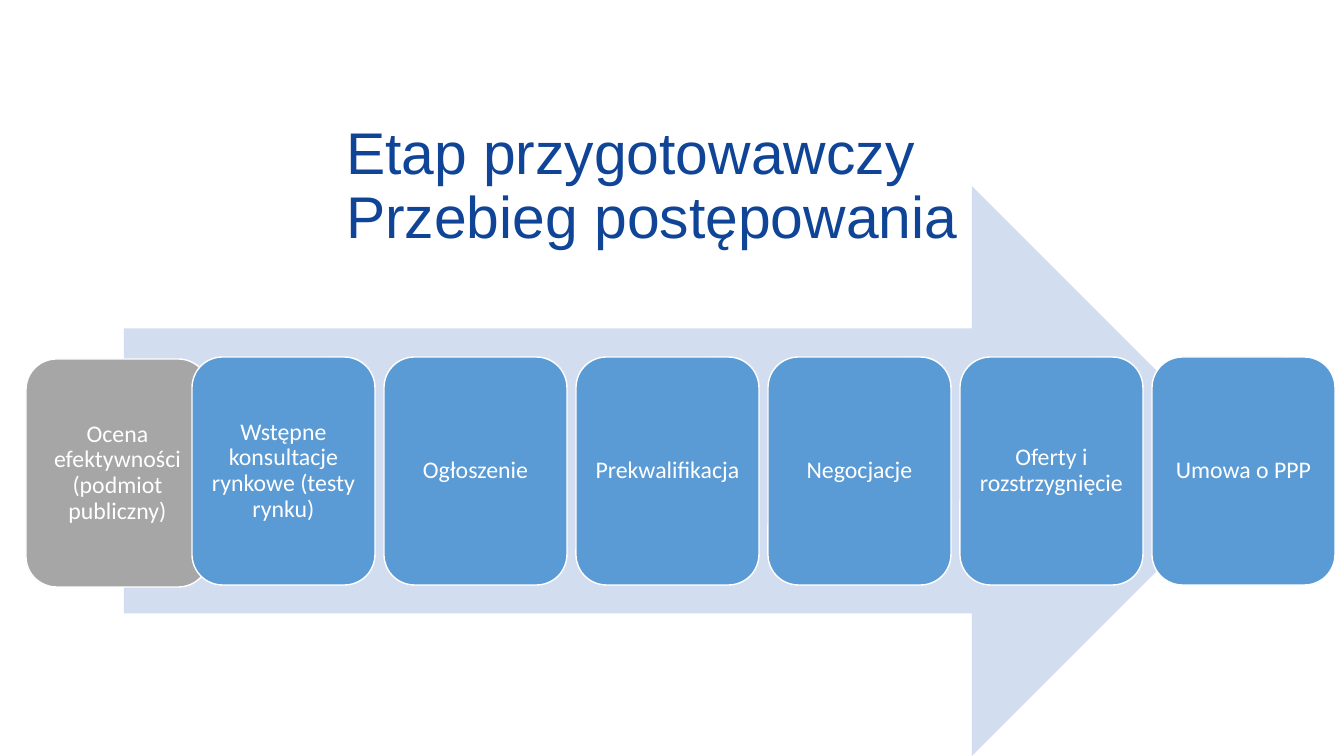
from dataclasses import dataclass

from pptx import Presentation
from pptx.dml.color import RGBColor
from pptx.enum.shapes import MSO_SHAPE
from pptx.enum.text import MSO_ANCHOR, MSO_AUTO_SIZE, PP_ALIGN
from pptx.util import Emu, Pt

ARROW = MSO_SHAPE.RIGHT_ARROW
CARD = MSO_SHAPE.ROUNDED_RECTANGLE
MIDDLE = MSO_ANCHOR.MIDDLE
NO_FIT = MSO_AUTO_SIZE.NONE
LEFT, CENTER = PP_ALIGN.LEFT, PP_ALIGN.CENTER

EMU_PER_PX = 914400 / 100.8
SLIDE_WIDTH, SLIDE_HEIGHT = 1344, 756
STAGE_PITCH, STAGE_TOP = 192, 357
CARD_WIDTH, CARD_HEIGHT = 183, 228
CARD_INSET = 7

ASSESSMENT = "Ocena efektywności (podmiot publiczny)"
STAGES = (
    "Wstępne konsultacje rynkowe (testy rynku)",
    "Ogłoszenie",
    "Prekwalifikacja",
    "Negocjacje",
    "Oferty i rozstrzygnięcie",
    "Umowa o PPP",
)


@dataclass(frozen=True)
class Theme:
    """Colours, fonts and type sizes of the slide."""

    title: RGBColor = RGBColor(0x0F, 0x44, 0x96)
    arrow: RGBColor = RGBColor(0xD2, 0xDE, 0xEF)
    assessment: RGBColor = RGBColor(0xA6, 0xA6, 0xA6)
    stage: RGBColor = RGBColor(0x5B, 0x9B, 0xD5)
    white: RGBColor = RGBColor(0xFF, 0xFF, 0xFF)
    title_font: str = "Arial"
    card_font: str = "Calibri"
    title_size: int = 42
    card_size: int = 17


THEME = Theme()


def px(length):
    """Turn pixels into EMU."""
    return Emu(round(length * EMU_PER_PX))


def style_paragraph(paragraph, font_name, size, color, alignment):
    """Set the font, alignment and line spacing of a paragraph."""
    paragraph.alignment = alignment
    paragraph.line_spacing = 0.9
    paragraph.font.name = font_name
    paragraph.font.size = Pt(size)
    paragraph.font.color.rgb = color


def set_title(slide, text):
    """Fill and place the title placeholder."""
    title = slide.shapes.title
    title.left, title.top = px(336), px(163)
    title.width, title.height = px(904), px(49)
    frame = title.text_frame
    frame.text = text
    frame.auto_size = NO_FIT
    frame.vertical_anchor = MIDDLE
    for paragraph in frame.paragraphs:
        style_paragraph(paragraph, THEME.title_font, THEME.title_size,
                        THEME.title, LEFT)


def add_filled(slide, kind, left, top, width, height, fill):
    """Add a flat preset shape without outline."""
    shape = slide.shapes.add_shape(kind, px(left), px(top), px(width), px(height))
    shape.shadow.inherit = False
    shape.fill.solid()
    shape.fill.fore_color.rgb = fill
    shape.line.fill.background()
    return shape


def add_card(slide, left, top, label, fill):
    """Add a rounded card with a white outline and a centred label."""
    card = add_filled(slide, CARD, left, top, CARD_WIDTH, CARD_HEIGHT, fill)
    card.line.color.rgb = THEME.white
    card.line.width = Pt(1)
    frame = card.text_frame
    frame.word_wrap = True
    frame.vertical_anchor = MIDDLE
    frame.margin_left = frame.margin_right = px(CARD_INSET)
    frame.margin_top = frame.margin_bottom = px(CARD_INSET)
    frame.text = label
    style_paragraph(frame.paragraphs[0], THEME.card_font, THEME.card_size,
                    THEME.white, CENTER)


def main():
    """Build and save the slide."""
    deck = Presentation()
    deck.slide_width, deck.slide_height = px(SLIDE_WIDTH), px(SLIDE_HEIGHT)
    slide = deck.slides.add_slide(deck.slide_layouts.get_by_name("Title Only"))
    set_title(slide, "Etap przygotowawczy\vPrzebieg postępowania")
    add_filled(slide, ARROW, 124, 186, 1133, 570, THEME.arrow)
    add_card(slide, 26, 359, ASSESSMENT, THEME.assessment)
    for position, stage in enumerate(STAGES, start=1):
        add_card(slide, position * STAGE_PITCH, STAGE_TOP, stage, THEME.stage)
    deck.save("out.pptx")


if __name__ == "__main__":
    main()
